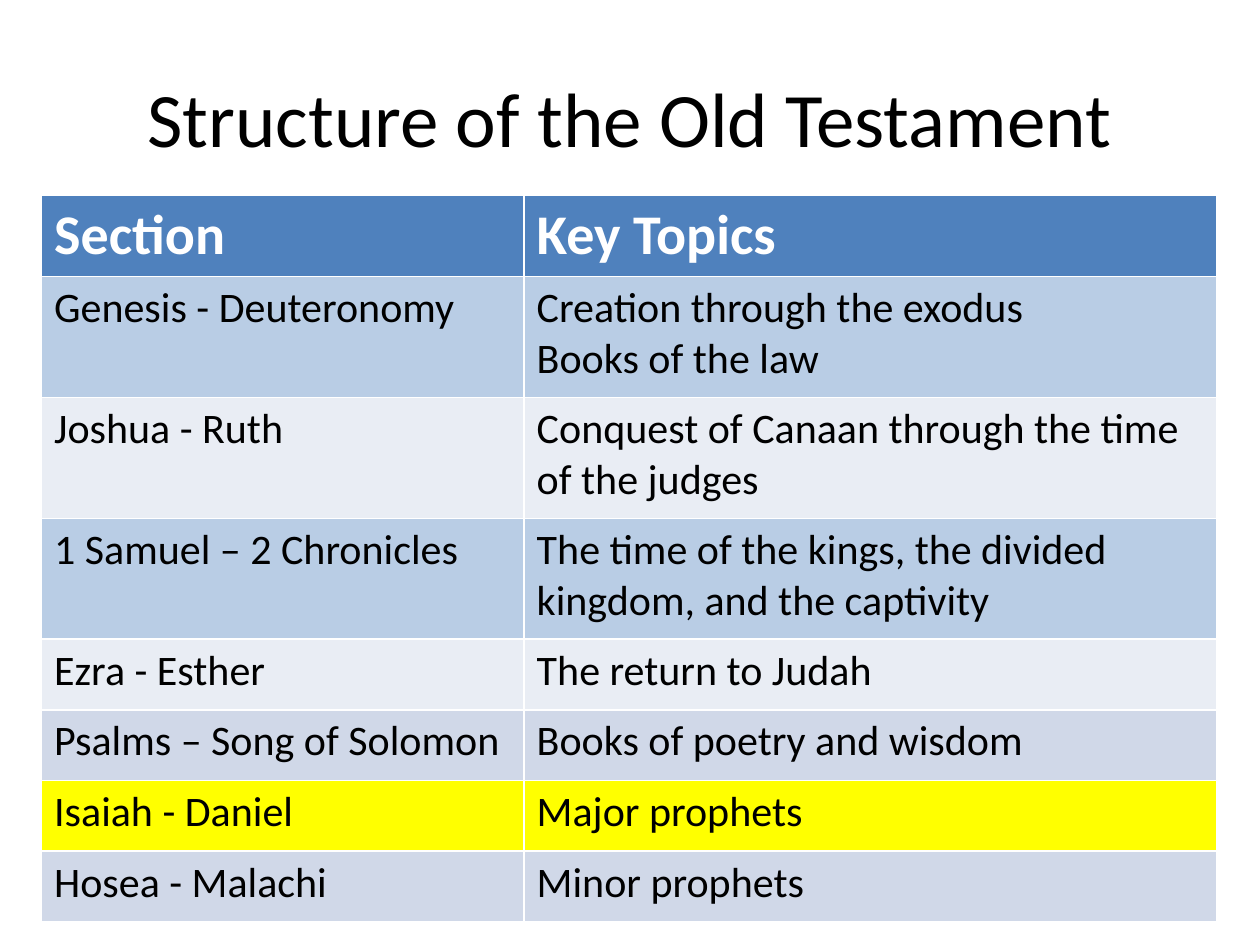
from pptx import Presentation
from pptx.dml.color import RGBColor
from pptx.enum.text import MSO_ANCHOR, PP_ALIGN
from pptx.util import Inches, Pt

CENTER = PP_ALIGN.CENTER
MIDDLE = MSO_ANCHOR.MIDDLE
TITLE_ONLY = 5

HEADER_BLUE, LIGHT_BLUE, PALE, GREY_BLUE, YELLOW = (
    "4F81BD", "B9CDE5", "E9EDF4", "D0D8E8", "FFFF00")
HEADER_FORMAT = {"name": "Calibri", "size": Pt(32), "bold": True}
BODY_FORMAT = {"name": "Calibri", "size": Pt(24), "bold": False}
TITLE_FORMAT = {"name": "Calibri", "size": Pt(44), "bold": False}

COLUMN_WIDTHS = (3.83, 5.5)
SINGLE, DOUBLE = 0.56, 0.96
SECTIONS = [
    ("Section", "Key Topics", HEADER_BLUE, SINGLE),
    ("Genesis - Deuteronomy", "Creation through the exodus\nBooks of the law",
     LIGHT_BLUE, DOUBLE),
    ("Joshua - Ruth", "Conquest of Canaan through the time of the judges",
     PALE, DOUBLE),
    ("1 Samuel – 2 Chronicles",
     "The time of the kings, the divided kingdom, and the captivity",
     LIGHT_BLUE, DOUBLE),
    ("Ezra - Esther", "The return to Judah", PALE, SINGLE),
    ("Psalms – Song of Solomon", "Books of poetry and wisdom", GREY_BLUE, SINGLE),
    ("Isaiah - Daniel", "Major prophets", YELLOW, SINGLE),
    ("Hosea - Malachi", "Minor prophets", GREY_BLUE, SINGLE),
]


def set_color(color_format, value):
    """Apply a hex colour to a fill or font colour."""
    color_format.rgb = RGBColor.from_string(value)


def write_text(text_frame, text, font_format, color):
    """Write text and format each of its runs."""
    text_frame.text = text
    for paragraph in text_frame.paragraphs:
        for run in paragraph.runs:
            for name, value in font_format.items():
                setattr(run.font, name, value)
            set_color(run.font.color, color)


def add_title(slide, left, top, width, height):
    """Place and format the slide title in the given box."""
    title = slide.shapes.title
    box = {"left": left, "top": top, "width": width, "height": height}
    for name, value in box.items():
        setattr(title, name, value)
    write_text(title.text_frame, "Structure of the Old Testament", TITLE_FORMAT, "000000")
    title.text_frame.vertical_anchor = MIDDLE
    title.text_frame.paragraphs[0].alignment = CENTER


def add_sections_table(slide, left, top, width, height):
    """Place the table of sections and key topics in the given box."""
    table = slide.shapes.add_table(
        len(SECTIONS), len(COLUMN_WIDTHS), left, top, width, height).table
    for column, column_width in zip(table.columns, COLUMN_WIDTHS):
        column.width = int(width * column_width / sum(COLUMN_WIDTHS))
    for index, (section, topics, fill, row_height) in enumerate(SECTIONS):
        row = table.rows[index]
        row.height = Inches(row_height)
        font_format, color = (
            (BODY_FORMAT, "000000") if index else (HEADER_FORMAT, "FFFFFF"))
        for cell, text in zip(row.cells, (section, topics)):
            cell.fill.solid()
            set_color(cell.fill.fore_color, fill)
            write_text(cell.text_frame, text, font_format, color)


def main():
    """Build and save the presentation."""
    presentation = Presentation()
    presentation.slide_width = Inches(10)
    presentation.slide_height = Inches(7.5)
    slide = presentation.slides.add_slide(presentation.slide_layouts[TITLE_ONLY])
    add_title(slide, Inches(0.5), Inches(0.3), Inches(9), Inches(1.25))
    add_sections_table(slide, Inches(0.33), Inches(1.55), Inches(9.33), Inches(5.73))
    presentation.save("out.pptx")


if __name__ == "__main__":
    main()
